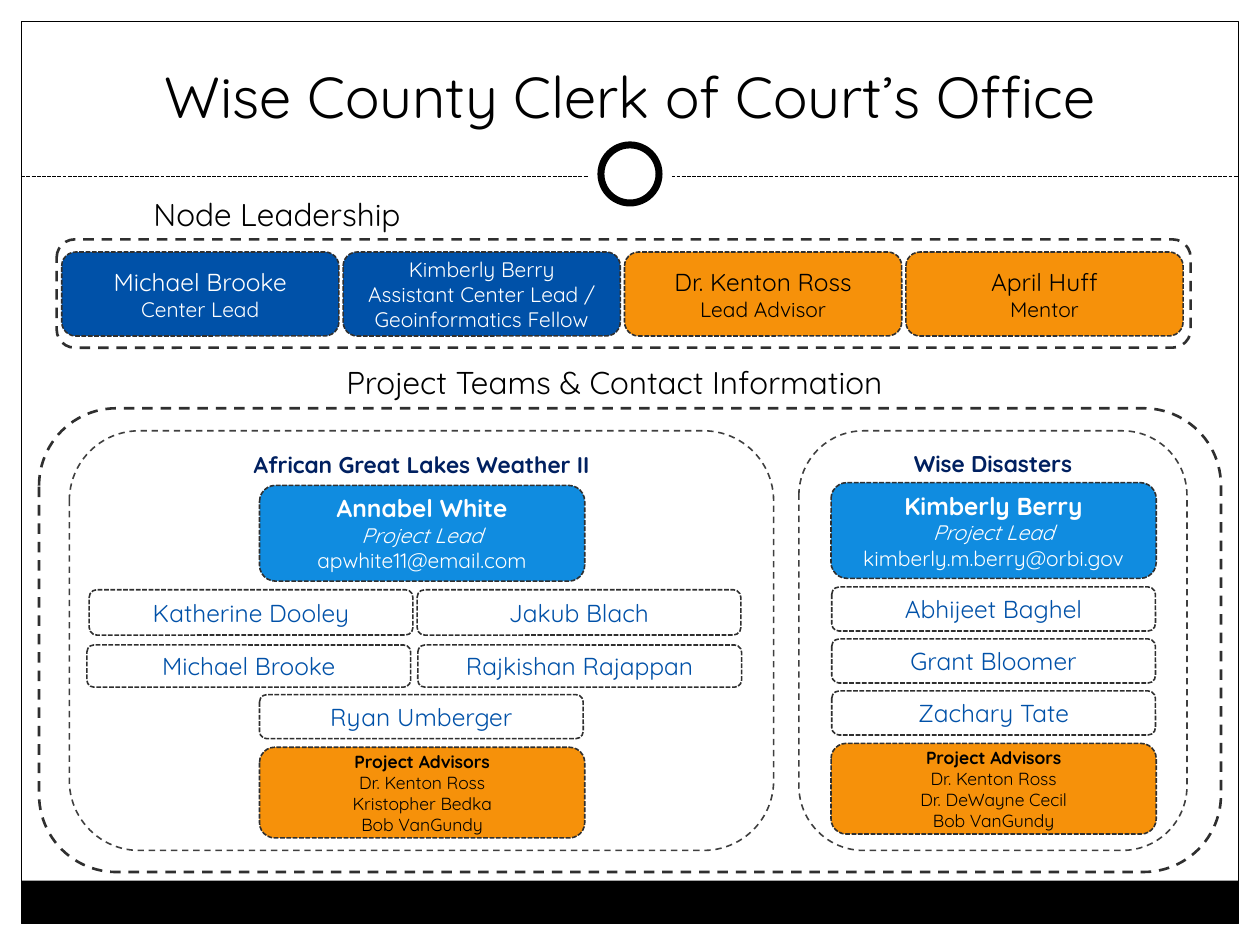
"""Build the office slide: node leadership above two project teams."""
from lxml import etree
from pptx import Presentation
from pptx.dml.color import RGBColor
from pptx.enum import dml, shapes, text
from pptx.oxml import ns
from pptx.util import Pt

FONT = "Quicksand"
COLORS = {
    "black": "000000", "white": "FFFFFF", "navy": "002060", "blue": "0051A8",
    "sky": "108CE0", "orange": "F6910A", "outline": "2F2F2F", "panel": "3F3F3F",
}
DASH = dml.MSO_LINE.DASH
SHORT_DASH = dml.MSO_LINE.SQUARE_DOT
ROUNDED = shapes.MSO_SHAPE.ROUNDED_RECTANGLE
RECTANGLE = shapes.MSO_SHAPE.RECTANGLE
OVAL = shapes.MSO_SHAPE.OVAL

TITLE = "Wise County Clerk of Court’s Office"
LABELS = [
    ("Node Leadership", (80.6, 108, 166.3, 28.8)),
    ("Project Teams & Contact Information", (190.8, 203.8, 340.6, 28.8)),
]
LEADERS = [
    ("blue", "white", 14, ["Michael Brooke", "Center Lead"]),
    ("blue", "white", 12, ["Kimberly Berry", "Assistant Center Lead / Geoinformatics Fellow"]),
    ("orange", "black", 14, ["Dr. Kenton Ross", "Lead Advisor"]),
    ("orange", "black", 14, ["April Huff", "Mentor"]),
]
TEAMS = [
    {
        "name": "African Great Lakes Weather II",
        "panel": (39.6, 402.5),
        "card_left": 148.3, "lead_top": 277.4, "advisors_top": 427,
        "lead": ["Annabel White", "Project Lead", "apwhite11@email.com"],
        "members": [
            ("Katherine Dooley", 51, 337, 25.9), ("Jakub Blach", 238.4, 337, 25.9),
            ("Michael Brooke", 49.7, 368.6, 24.1), ("Rajkishan Rajappan", 238.8, 368.6, 24.1),
            ("Ryan Umberger", 148.3, 396.9, 25.2),
        ],
        "advisors": ["Dr. Kenton Ross", "Kristopher Bedka", "Bob VanGundy"],
    },
    {
        "name": "Wise Disasters",
        "panel": (456.5, 221.8),
        "card_left": 474.9, "lead_top": 275.8, "advisors_top": 424.8,
        "lead": ["Kimberly Berry", "Project Lead", "kimberly.m.berry@orbi.gov"],
        "members": [
            (name, 475.3, 335.4 + 29.7 * row, 25.2)
            for row, name in enumerate(["Abhijeet Baghel", "Grant Bloomer", "Zachary Tate"])
        ],
        "advisors": ["Dr. Kenton Ross", "Dr. DeWayne Cecil", "Bob VanGundy"],
    },
]
LEADER_LEFT, LEADER_PITCH = 35.3, 160.8


def rgb(name):
    return RGBColor.from_string(COLORS[name])


def write(paragraph, content, *, size, color, bold=False, italic=False,
          align=text.PP_ALIGN.CENTER):
    paragraph.alignment = align
    run = paragraph.add_run()
    run.text = content
    font = run.font
    font.name, font.size, font.bold, font.italic = FONT, Pt(size), bold, italic
    font.color.rgb = rgb(color)


def write_lines(frame, lines, color):
    """Write (text, format) pairs as the paragraphs of one frame."""
    for index, (content, style) in enumerate(lines):
        paragraph = frame.add_paragraph() if index else frame.paragraphs[0]
        write(paragraph, content, color=color, **style)


def set_line(line, color, width, dash=None):
    line.color.rgb = rgb(color)
    line.width = Pt(width)
    if dash:
        line.dash_style = dash


def add_box(slide, box, kind=ROUNDED, *, fill=None, line="outline", width=0.9, dash=None):
    shape = slide.shapes.add_shape(kind, *map(Pt, box))
    shape.shadow.inherit = False
    if fill:
        shape.fill.solid()
        shape.fill.fore_color.rgb = rgb(fill)
    else:
        shape.fill.background()
    if line:
        set_line(shape.line, line, width, dash)
    else:
        shape.line.fill.background()
    return shape


def add_card(slide, box, lines, color, fill=None):
    shape = add_box(slide, box, fill=fill, dash=SHORT_DASH)
    shape.text_frame.word_wrap = True
    shape.text_frame.vertical_anchor = text.MSO_ANCHOR.MIDDLE
    write_lines(shape.text_frame, lines, color)


def add_frame(slide):
    add_box(slide, (12.2, 503.3, 695.6, 24.5), RECTANGLE, fill="black", line=None)
    add_box(slide, (12.2, 12.2, 695.6, 515.6), RECTANGLE, line="black", width=0.75)
    rule = slide.shapes.add_connector(
        shapes.MSO_CONNECTOR.STRAIGHT, Pt(12.2), Pt(100.8), Pt(707.8), Pt(100.8))
    set_line(rule.line, "black", 0.75, SHORT_DASH)
    etree.SubElement(rule.element.spPr, ns.qn("a:effectLst"))
    add_box(slide, (336, 75.4, 48, 48), OVAL, fill="white", line=None)
    add_box(slide, (343.4, 82.8, 33.2, 33.2), OVAL, fill="white", line="black", width=4)


def add_title(slide):
    title = slide.shapes.title
    title.left, title.top, title.width, title.height = map(Pt, (24, 18, 672, 60))
    frame = title.text_frame
    frame.auto_size = text.MSO_AUTO_SIZE.NONE
    frame.vertical_anchor = text.MSO_ANCHOR.BOTTOM
    write(frame.paragraphs[0], TITLE, size=33, color="black")


def add_labels(slide):
    for content, box in LABELS:
        frame = slide.shapes.add_textbox(*map(Pt, box)).text_frame
        frame.word_wrap = False
        frame.auto_size = text.MSO_AUTO_SIZE.SHAPE_TO_FIT_TEXT
        write(frame.paragraphs[0], content, size=18, color="black", align=text.PP_ALIGN.LEFT)


def add_leaders(slide):
    add_box(slide, (32.4, 136.8, 648, 61.9), width=1.5, dash=DASH)
    for column, (fill, color, size, (name, role)) in enumerate(LEADERS):
        box = (LEADER_LEFT + column * LEADER_PITCH, 144, 158.4, 48)
        add_card(slide, box, [(name, {"size": size}), (role, {"size": 12})], color, fill)


def add_team(slide, team):
    left, width = team["panel"]
    panel = add_box(slide, (left, 246.2, width, 239.8), line="panel", dash=DASH)
    frame = panel.text_frame
    frame.word_wrap = True
    frame.vertical_anchor = text.MSO_ANCHOR.TOP
    frame.margin_top = Pt(0)
    write(frame.paragraphs[0], team["name"], size=13, color="navy", bold=True)

    lead_styles = [{"size": 14, "bold": True}, {"size": 12, "italic": True}, {"size": 12}]
    add_card(slide, (team["card_left"], team["lead_top"], 185.8, 54.7),
             list(zip(team["lead"], lead_styles)), "white", "sky")
    for name, member_left, top, height in team["members"]:
        add_card(slide, (member_left, top, 185, height), [(name, {"size": 14})], "blue")
    advisors = [("Project Advisors", {"size": 10, "bold": True})]
    advisors += [(name, {"size": 10}) for name in team["advisors"]]
    add_card(slide, (team["card_left"], team["advisors_top"], 185.8, 51.8),
             advisors, "black", "orange")


def main():
    presentation = Presentation()
    presentation.slide_width, presentation.slide_height = Pt(720), Pt(540)
    slide = presentation.slides.add_slide(presentation.slide_layouts[5])
    add_frame(slide)
    add_title(slide)
    add_labels(slide)
    add_leaders(slide)
    add_box(slide, (22.3, 233.3, 675.4, 265), width=1.5, dash=DASH)
    for team in TEAMS:
        add_team(slide, team)
    presentation.save("out.pptx")


if __name__ == "__main__":
    main()
